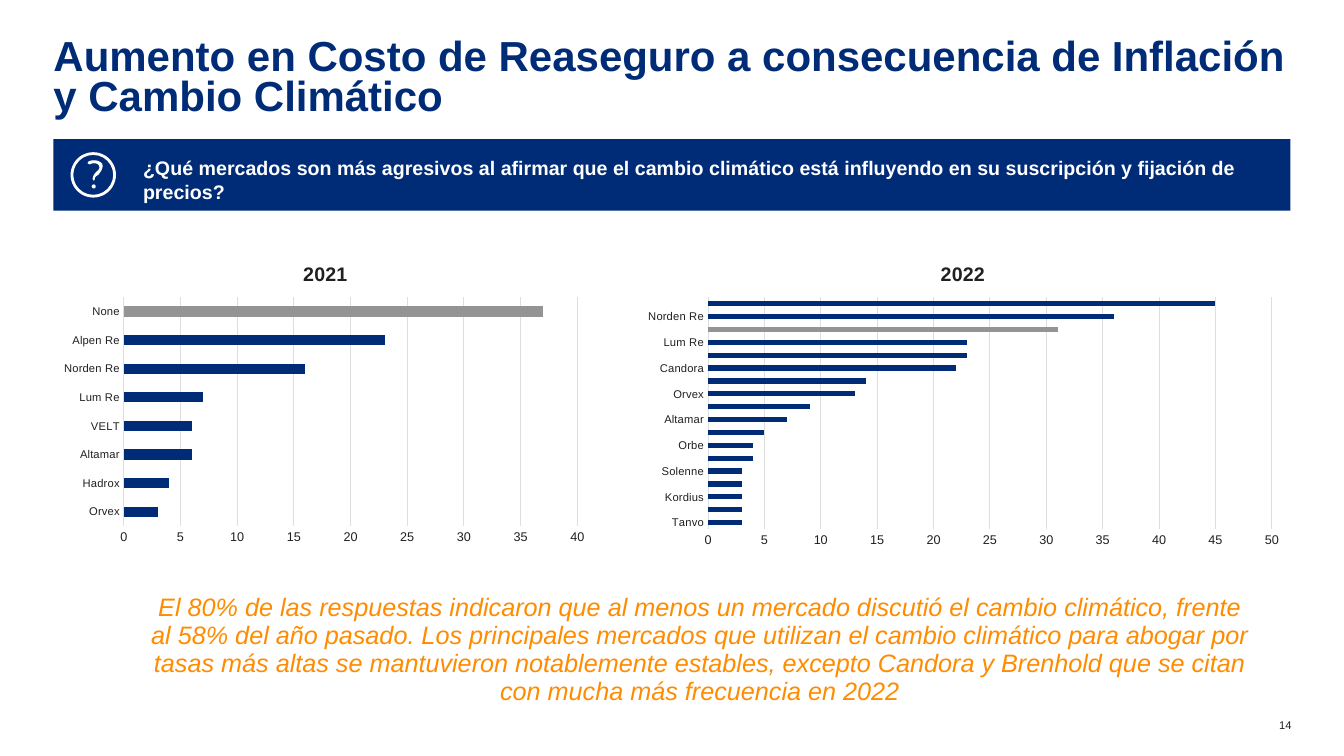
from lxml import etree
from pptx import Presentation
from pptx.chart.data import CategoryChartData
from pptx.dml.color import RGBColor
from pptx.enum.chart import XL_CHART_TYPE, XL_TICK_MARK
from pptx.enum.shapes import MSO_SHAPE
from pptx.enum.text import MSO_ANCHOR, MSO_AUTO_SIZE, PP_ALIGN
from pptx.util import Inches, Pt

BAR = XL_CHART_TYPE.BAR_CLUSTERED
NO_TICK = XL_TICK_MARK.NONE
RECTANGLE, OVAL, RING = MSO_SHAPE.RECTANGLE, MSO_SHAPE.OVAL, MSO_SHAPE.DONUT
LEFT, CENTER, RIGHT = PP_ALIGN.LEFT, PP_ALIGN.CENTER, PP_ALIGN.RIGHT
TOP, NO_AUTOFIT = MSO_ANCHOR.TOP, MSO_AUTO_SIZE.NONE

NAVY = RGBColor(0x00, 0x2C, 0x77)
GRAY = RGBColor(0x94, 0x94, 0x94)
GRID = RGBColor(0xDE, 0xDE, 0xDE)
INK = RGBColor(0x20, 0x20, 0x20)
ORANGE = RGBColor(0xFF, 0x8C, 0x00)
WHITE = RGBColor(0xFF, 0xFF, 0xFF)

FONT = "Arial"
NO_ANSWER = "None"
CHART_NS = "http://schemas.openxmlformats.org/drawingml/2006/chart"

MARKETS_2021 = [("Orvex", 3), ("Hadrox", 4), ("Altamar", 6), ("VELT", 6),
                ("Lum Re", 7), ("Norden Re", 16), ("Alpen Re", 23), (NO_ANSWER, 37)]
MARKETS_2022 = [("Tanvo", 3), ("Amparo Re", 3), ("Kordius", 3), ("Evlin", 3),
                ("Solenne", 3), ("Hadrox", 4), ("Orbe", 4), ("Ultra Re", 5),
                ("Altamar", 7), ("Dorvals / London", 9), ("Orvex", 13),
                ("Brenhold", 14), ("Candora", 22), ("VELT", 23), ("Lum Re", 23),
                (NO_ANSWER, 31), ("Norden Re", 36), ("Alpen Re", 45)]

# Outline of the question mark in hundredths of an inch: a start, then cubic curves
MARK_START = (18, 9)
MARK_CURVES = [
    ((17, 10), (17, 11), (17, 11)), ((18, 12), (19, 12), (19, 12)),
    ((23, 10), (27, 11), (28, 13)), ((29, 15), (29, 17), (26, 19)),
    ((23, 22), (22, 24), (22, 26)), ((22, 27), (22, 28), (23, 28)),
    ((24, 28), (24, 27), (24, 26)), ((24, 25), (25, 24), (28, 22)),
    ((31, 18), (33, 14), (31, 11)), ((28, 8), (23, 7), (18, 9)),
]


def style_font(font, size, color, bold=False, italic=False):
    font.name, font.size = FONT, Pt(size)
    font.bold, font.italic = bold, italic
    font.color.rgb = color


def write_text(frame, text, size, color, align=LEFT, spacing=None, margin=None, **style):
    frame.word_wrap = True
    frame.auto_size = NO_AUTOFIT
    frame.vertical_anchor = TOP
    if margin is not None:
        frame.margin_left = frame.margin_right = Inches(margin)
        frame.margin_top = frame.margin_bottom = Inches(margin)
    para = frame.paragraphs[0]
    para.alignment = align
    if spacing is not None:
        para.line_spacing = spacing
    span = para.add_run()
    span.text = text
    style_font(span.font, size, color, **style)


def add_text(page, box, text, size, color, **style):
    textbox = page.shapes.add_textbox(*map(Inches, box))
    write_text(textbox.text_frame, text, size, color, **style)


def paint(shape, color):
    shape.shadow.inherit = False
    shape.fill.solid()
    shape.fill.fore_color.rgb = color
    shape.line.fill.background()
    return shape


def add_title(page, box, text):
    title = page.shapes.title
    title.left, title.top, title.width, title.height = map(Inches, box)
    write_text(title.text_frame, text, 30, NAVY, spacing=0.8, margin=0, bold=True)


def curve_points(start, curves, steps=6):
    """Flatten a chain of cubic curves into points."""
    points = []
    for first, second, end in curves:
        for step in range(1, steps + 1):
            t = step / steps
            weights = ((1 - t) ** 3, 3 * t * (1 - t) ** 2, 3 * t * t * (1 - t), t ** 3)
            corners = (start, first, second, end)
            points.append(tuple(sum(w * corner[axis] for w, corner in zip(weights, corners))
                                for axis in (0, 1)))
        start = end
    return points


def add_question_icon(page, left, top, size):
    ring = paint(page.shapes.add_shape(RING, Inches(left), Inches(top),
                                       Inches(size), Inches(size)), WHITE)
    ring.adjustments[0] = 0.06
    paint(page.shapes.add_shape(OVAL, Inches(left + 0.21), Inches(top + 0.32),
                                Inches(0.04), Inches(0.04)), WHITE)

    def place(point):
        return Inches(left + point[0] / 100), Inches(top + point[1] / 100)

    builder = page.shapes.build_freeform(*place(MARK_START))
    builder.add_line_segments([place(p) for p in curve_points(MARK_START, MARK_CURVES)])
    paint(builder.convert_to_shape(), WHITE)


def add_question_band(page, box, text):
    left, top, width, height = box
    paint(page.shapes.add_shape(RECTANGLE, *map(Inches, box)), NAVY)
    add_text(page, (left + 0.79, top + 0.12, width - 1.09, height - 0.14),
             text, 14, WHITE, bold=True)
    add_question_icon(page, left + 0.17, top + 0.13, 0.45)


def set_layout(parent, index, **values):
    """Give a chart part a manual layout; values are fractions of the chart."""
    for old in parent.findall(f"{{{CHART_NS}}}layout"):
        parent.remove(old)
    layout = etree.Element(f"{{{CHART_NS}}}layout")
    manual = etree.SubElement(layout, f"{{{CHART_NS}}}manualLayout")
    for name, value in values.items():
        text = value if isinstance(value, str) else f"{value:.3f}"
        etree.SubElement(manual, f"{{{CHART_NS}}}{name}").set("val", text)
    parent.insert(index, layout)


def add_market_chart(page, box, plot, year, markets, limit, gap):
    """Draw one bar chart in box, its bars in plot (both in inches)."""
    left, top, width, height = box
    data = CategoryChartData()
    data.categories = [name for name, _ in markets]
    data.add_series("Series 1", [value for _, value in markets])
    chart = page.shapes.add_chart(BAR, *map(Inches, box), data).chart
    style_font(chart.font, 10, INK)
    chart.has_legend = False

    chart.has_title = True
    heading = chart.chart_title.text_frame
    heading.text = year
    style_font(heading.paragraphs[0].runs[0].font, 14, INK, bold=True)
    chart.chart_title.include_in_layout = False
    set_layout(chart.chart_title._element, 1, xMode="edge", yMode="edge",
               x=0.5 - 0.26 / width, y=0.12 / height)
    set_layout(chart._chartSpace.chart.plotArea, 0, layoutTarget="inner",
               xMode="edge", yMode="edge",
               x=(plot[0] - left) / width, y=(plot[1] - top) / height,
               w=plot[2] / width, h=plot[3] / height)

    names, values = chart.category_axis, chart.value_axis
    for axis, size in ((names, 8), (values, 9)):
        axis.major_tick_mark = axis.minor_tick_mark = NO_TICK
        style_font(axis.tick_labels.font, size, INK)
    values.minimum_scale, values.maximum_scale, values.major_unit = 0, limit, 5
    values.format.line.fill.background()
    values.has_major_gridlines = True
    for line in (names.format.line, values.major_gridlines.format.line):
        line.color.rgb = GRID
        line.width = Pt(0.75)

    bars = chart.plots[0]
    bars.gap_width = gap
    bars.vary_by_categories = False
    series = bars.series[0]
    series.invert_if_negative = False
    no_answer = series.points[[name for name, _ in markets].index(NO_ANSWER)]
    for part, color in ((series, NAVY), (no_answer, GRAY)):
        part.format.fill.solid()
        part.format.fill.fore_color.rgb = color


def main():
    deck = Presentation()
    deck.slide_width, deck.slide_height = Inches(13.33), Inches(7.5)
    page = deck.slides.add_slide(deck.slide_layouts[5])
    add_title(page, (0.53, 0.39, 12.27, 0.54),
              "Aumento en Costo de Reaseguro a consecuencia de Inflación y Cambio Climático")
    add_question_band(page, (0.53, 1.38, 12.27, 0.71),
                      "¿Qué mercados son más agresivos al afirmar que el cambio climático "
                      "está influyendo en su suscripción y fijación de precios?")
    add_market_chart(page, (0.54, 2.44, 5.38, 3.03), (1.23, 2.95, 4.5, 2.27),
                     "2021", MARKETS_2021, limit=40, gap=182)
    add_market_chart(page, (6.3, 2.44, 6.51, 3.05), (7.02, 2.95, 5.59, 2.3),
                     "2022", MARKETS_2022, limit=50, gap=145)
    add_text(page, (1.48, 5.89, 10.92, 1.12),
             "El 80% de las respuestas indicaron que al menos un mercado discutió el cambio "
             "climático, frente al 58% del año pasado. Los principales mercados que utilizan "
             "el cambio climático para abogar por tasas más altas se mantuvieron notablemente "
             "estables, excepto Candora y Brenhold que se citan con mucha más frecuencia en 2022",
             18, ORANGE, align=CENTER, spacing=Pt(20), margin=0, italic=True)
    add_text(page, (12.5, 7.13, 0.31, 0.13), "14", 8, INK, align=RIGHT, margin=0)
    deck.save("out.pptx")


if __name__ == "__main__":
    main()
